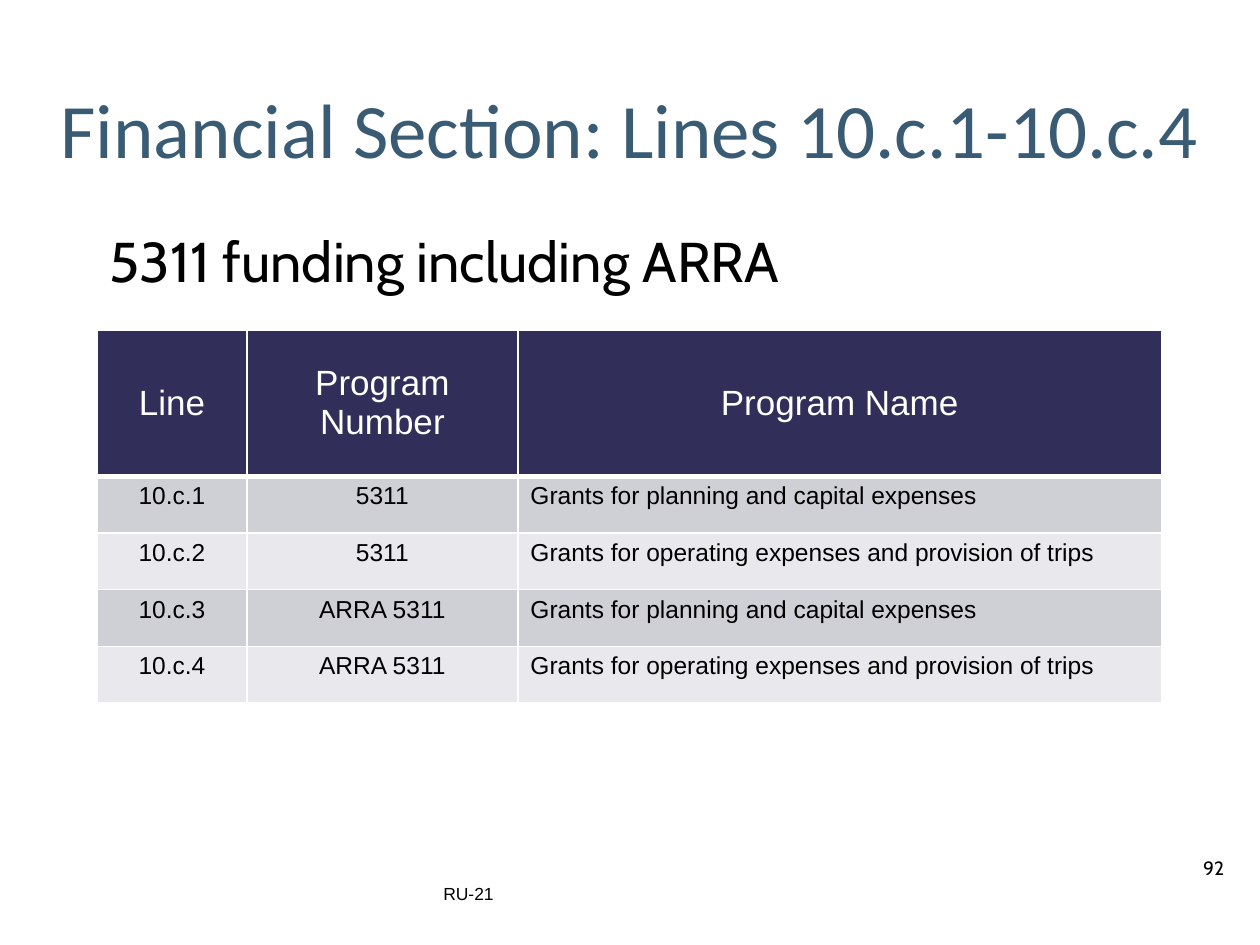
"""Build the slide on financial section lines 10.c.1 to 10.c.4."""
from lxml.etree import SubElement
from pptx import Presentation
from pptx.dml.color import RGBColor
from pptx.enum.text import MSO_ANCHOR as Anchor, PP_ALIGN as Align
from pptx.oxml.ns import qn
from pptx.util import Inches, Pt

BLUE = RGBColor(0x39, 0x5B, 0x74)
NAVY = RGBColor(0x31, 0x2F, 0x59)
BLACK = RGBColor(0, 0, 0)
WHITE = RGBColor(0xFF, 0xFF, 0xFF)
BANDS = RGBColor(0xCF, 0xCF, 0xD6), RGBColor(0xE9, 0xE8, 0xEC)

TEXTS = [
    ("Financial Section: Lines 10.c.1-10.c.4", (0.29, 0.48, 9.42, 1.07),
     "Calibri", 44, BLUE, Align.CENTER, Anchor.MIDDLE),
    ("5311 funding including ARRA", (0.77, 1.75, 8.45, 0.75),
     "Cabin", 32, BLACK, Align.LEFT, Anchor.TOP),
    ("92", (9.45, 6.75, 0.5, 0.4), "Cabin", 11, BLACK, Align.LEFT, Anchor.TOP),
    ("RU-21", (3.42, 6.96, 3.17, 0.4), "Arial", 10, BLACK, Align.LEFT, Anchor.TOP),
]
CAPITAL = "Grants for planning and capital expenses"
OPERATING = "Grants for operating expenses and provision of trips"
PROGRAMS = [
    ("Line", "Program Number", "Program Name"),
    ("10.c.1", "5311", CAPITAL),
    ("10.c.2", "5311", OPERATING),
    ("10.c.3", "ARRA 5311", CAPITAL),
    ("10.c.4", "ARRA 5311", OPERATING),
]
COLUMN_WIDTHS = 1.19, 2.15, 5.11
HEADER_HEIGHT, ROW_HEIGHT = 1.16, 0.45


def write(paragraph, text, font, size, color, align):
    paragraph.alignment = align
    run = paragraph.add_run()
    run.text = text
    run.font.name = font
    run.font.size = Pt(size)
    run.font.color.rgb = color


def add_text(slide, text, place, font, size, color, align, anchor):
    frame = slide.shapes.add_textbox(*map(Inches, place)).text_frame
    frame.word_wrap = True
    frame.vertical_anchor = anchor
    write(frame.paragraphs[0], text, font, size, color, align)


def add_borders(cell, bottom):
    properties = cell._tc.get_or_add_tcPr()
    for side, points in (("L", 1), ("R", 1), ("T", 1), ("B", bottom)):
        line = SubElement(properties, qn(f"a:ln{side}"), w=str(Pt(points)))
        fill = SubElement(line, qn("a:solidFill"))
        SubElement(fill, qn("a:srgbClr"), val=str(WHITE))


def add_programs(slide):
    heights = [HEADER_HEIGHT] + [ROW_HEIGHT] * (len(PROGRAMS) - 1)
    table = slide.shapes.add_table(
        len(PROGRAMS), len(COLUMN_WIDTHS), Inches(0.77), Inches(2.62),
        Inches(sum(COLUMN_WIDTHS)), Inches(sum(heights))).table
    for column, width in zip(table.columns, COLUMN_WIDTHS):
        column.width = Inches(width)
    for r, (program, height) in enumerate(zip(PROGRAMS, heights)):
        header = r == 0
        table.rows[r].height = Inches(height)
        for c, text in enumerate(program):
            cell = table.cell(r, c)
            add_borders(cell, 3 if header else 1)
            cell.fill.solid()
            cell.fill.fore_color.rgb = NAVY if header else BANDS[(r - 1) % 2]
            cell.vertical_anchor = Anchor.MIDDLE if header else Anchor.TOP
            write(cell.text_frame.paragraphs[0], text, "Arial",
                  20 if header else 14, WHITE if header else BLACK,
                  Align.CENTER if header or c < 2 else Align.LEFT)


def main():
    deck = Presentation()
    deck.slide_width, deck.slide_height = Inches(10), Inches(7.5)
    slide = deck.slides.add_slide(deck.slide_layouts[6])
    for entry in TEXTS:
        add_text(slide, *entry)
    add_programs(slide)
    deck.save("out.pptx")


if __name__ == "__main__":
    main()
